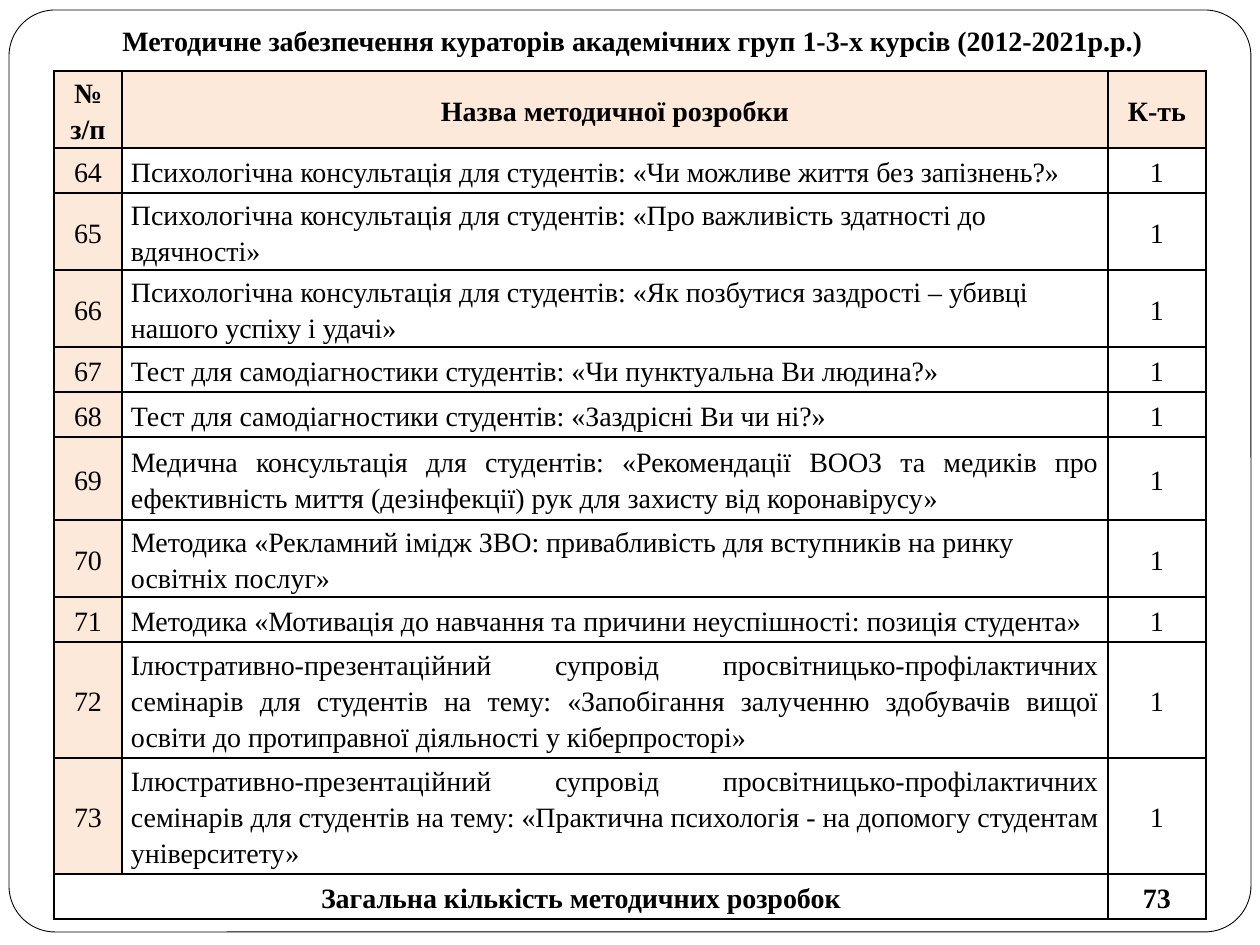
from pptx import Presentation
from pptx.dml.color import RGBColor
from pptx.enum.shapes import MSO_SHAPE
from pptx.enum.text import MSO_ANCHOR, PP_ALIGN
from pptx.oxml import parse_xml
from pptx.oxml.ns import nsdecls
from pptx.util import Emu, Pt

PX = 914400 // 126
FONT = "Times New Roman"
COLORS = {"ink": "000000", "paper": "FFFFFF", "accent": "FDE9D9"}
CENTER, LEFT, JUSTIFY = PP_ALIGN.CENTER, PP_ALIGN.LEFT, PP_ALIGN.JUSTIFY

TITLE = "Методичне забезпечення кураторів академічних груп 1-3-х курсів (2012-2021р.р.)"
HEADER = ("№ з/п", "Назва методичної розробки", "К-ть")
TOTAL = "Загальна кількість методичних розробок"
FIRST_NUMBER = 64
COLUMN_WIDTHS = (68, 986, 98)
HEADER_HEIGHT, TOTAL_HEIGHT = 77, 45

# Name, alignment, row height
ITEMS = [
    ("Психологічна консультація для студентів: «Чи можливе життя без запізнень?»", JUSTIFY, 45),
    ("Психологічна консультація для студентів: «Про важливість здатності до вдячності»", LEFT, 77),
    ("Психологічна консультація для студентів: «Як позбутися заздрості – убивці "
     "нашого успіху і удачі»", LEFT, 77),
    ("Тест для самодіагностики студентів: «Чи пунктуальна Ви людина?»", LEFT, 45),
    ("Тест для самодіагностики студентів: «Заздрісні Ви чи ні?»", LEFT, 45),
    ("Медична консультація для студентів: «Рекомендації ВООЗ та медиків про "
     "ефективність миття (дезінфекції) рук для захисту від коронавірусу»", JUSTIFY, 83),
    ("Методика «Рекламний імідж ЗВО: привабливість для вступників на ринку "
     "освітніх послуг»", LEFT, 77),
    ("Методика «Мотивація до навчання та причини неуспішності: позиція студента»", LEFT, 45),
    ("Ілюстративно-презентаційний супровід просвітницько-профілактичних "
     "семінарів для студентів на тему: «Запобігання залученню здобувачів вищої "
     "освіти до протиправної діяльності у кіберпросторі»", JUSTIFY, 116),
    ("Ілюстративно-презентаційний супровід просвітницько-профілактичних "
     "семінарів для студентів на тему: «Практична психологія - на допомогу "
     "студентам університету»", JUSTIFY, 116),
]


def px(n):
    return Emu(n * PX)


def rgb(name):
    return RGBColor.from_string(COLORS[name])


class SlideBuilder:
    def __init__(self, prs):
        self.s = prs.slides.add_slide(prs.slide_layouts[5])

    def style(self, p, align, bold=False):
        p.alignment = align
        for r in p.runs:
            r.font.name, r.font.size, r.font.bold = FONT, Pt(16), bold
            r.font.color.rgb = rgb("ink")

    def frame(self, x, y, w, h):
        sp = self.s.shapes.add_shape(MSO_SHAPE.ROUNDED_RECTANGLE, px(x), px(y), px(w), px(h))
        sp.adjustments[0] = 0.05
        sp.shadow.inherit = False
        sp.fill.solid()
        sp.fill.fore_color.rgb = rgb("paper")
        sp.line.color.rgb = rgb("ink")
        sp.line.width = Pt(0.5)
        # Send behind the title
        self.s.shapes._spTree.insert(2, sp._element)

    def title(self, text, x, y, w, h):
        sp = self.s.shapes.title
        sp.left, sp.top, sp.width, sp.height = px(x), px(y), px(w), px(h)
        tf = sp.text_frame
        tf.text = text
        tf.word_wrap = True
        tf.vertical_anchor = MSO_ANCHOR.MIDDLE
        self.style(tf.paragraphs[0], CENTER, True)

    def table(self, x, y, widths, heights):
        shape = self.s.shapes.add_table(len(heights), len(widths), px(x), px(y),
                                        px(sum(widths)), px(sum(heights)))
        table = shape.table
        for column, w in zip(table.columns, widths):
            column.width = px(w)
        for row, h in zip(table.rows, heights):
            row.height = px(h)
        return table

    def cell(self, cell, text, align=CENTER, bold=False, fill="paper"):
        cell.text = text
        cell.vertical_anchor = MSO_ANCHOR.MIDDLE
        cell.margin_left = cell.margin_right = px(9)
        cell.margin_top = cell.margin_bottom = 0
        p = cell.text_frame.paragraphs[0]
        p.line_spacing = 1.15
        self.style(p, align, bold)
        # Borders come before the fill in the cell properties
        tcPr = cell._tc.get_or_add_tcPr()
        for side in ("lnL", "lnR", "lnT", "lnB"):
            tcPr.append(parse_xml(
                f'<a:{side} {nsdecls("a")} w="{Pt(1)}"><a:solidFill>'
                f'<a:srgbClr val="{COLORS["ink"]}"/></a:solidFill></a:{side}>'))
        cell.fill.solid()
        cell.fill.fore_color.rgb = rgb(fill)


def main():
    prs = Presentation()
    prs.slide_width, prs.slide_height = px(1260), px(945)
    b = SlideBuilder(prs)

    # Frame and title
    b.frame(9, 10, 1242, 922)
    b.title(TITLE, 67, 17, 1131, 47)

    # Table header
    heights = [HEADER_HEIGHT, *(h for _, _, h in ITEMS), TOTAL_HEIGHT]
    table = b.table(54, 71, COLUMN_WIDTHS, heights)
    for col, text in enumerate(HEADER):
        b.cell(table.cell(0, col), text, bold=True, fill="accent")

    # Numbered items
    for row, (name, align, _) in enumerate(ITEMS, 1):
        b.cell(table.cell(row, 0), str(FIRST_NUMBER + row - 1), fill="accent")
        b.cell(table.cell(row, 1), name, align)
        b.cell(table.cell(row, 2), "1")

    # Total row
    last = len(heights) - 1
    table.cell(last, 0).merge(table.cell(last, 1))
    for col, text in enumerate((TOTAL, "", str(FIRST_NUMBER + len(ITEMS) - 1))):
        b.cell(table.cell(last, col), text, bold=True)

    prs.save("out.pptx")


if __name__ == "__main__":
    main()
